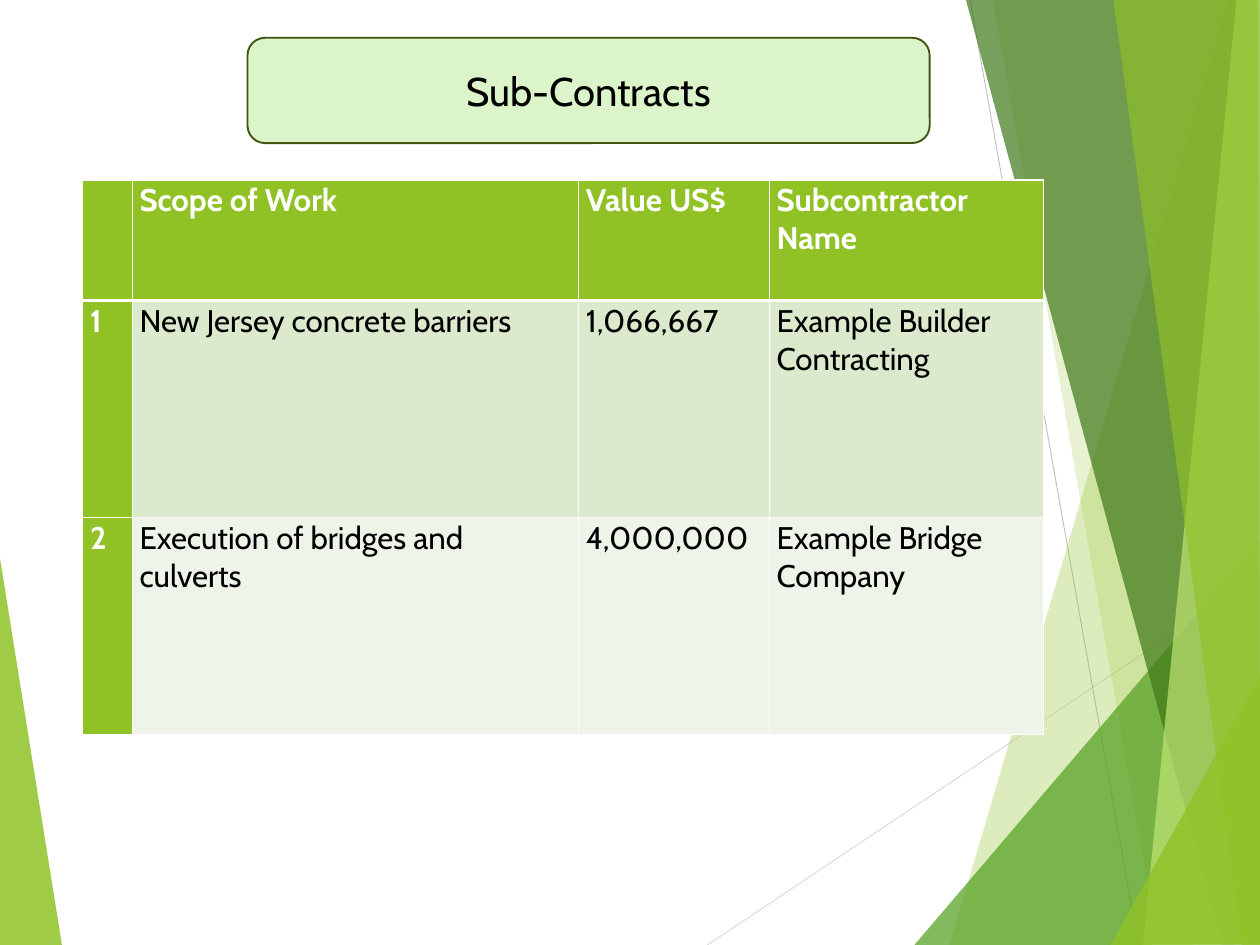
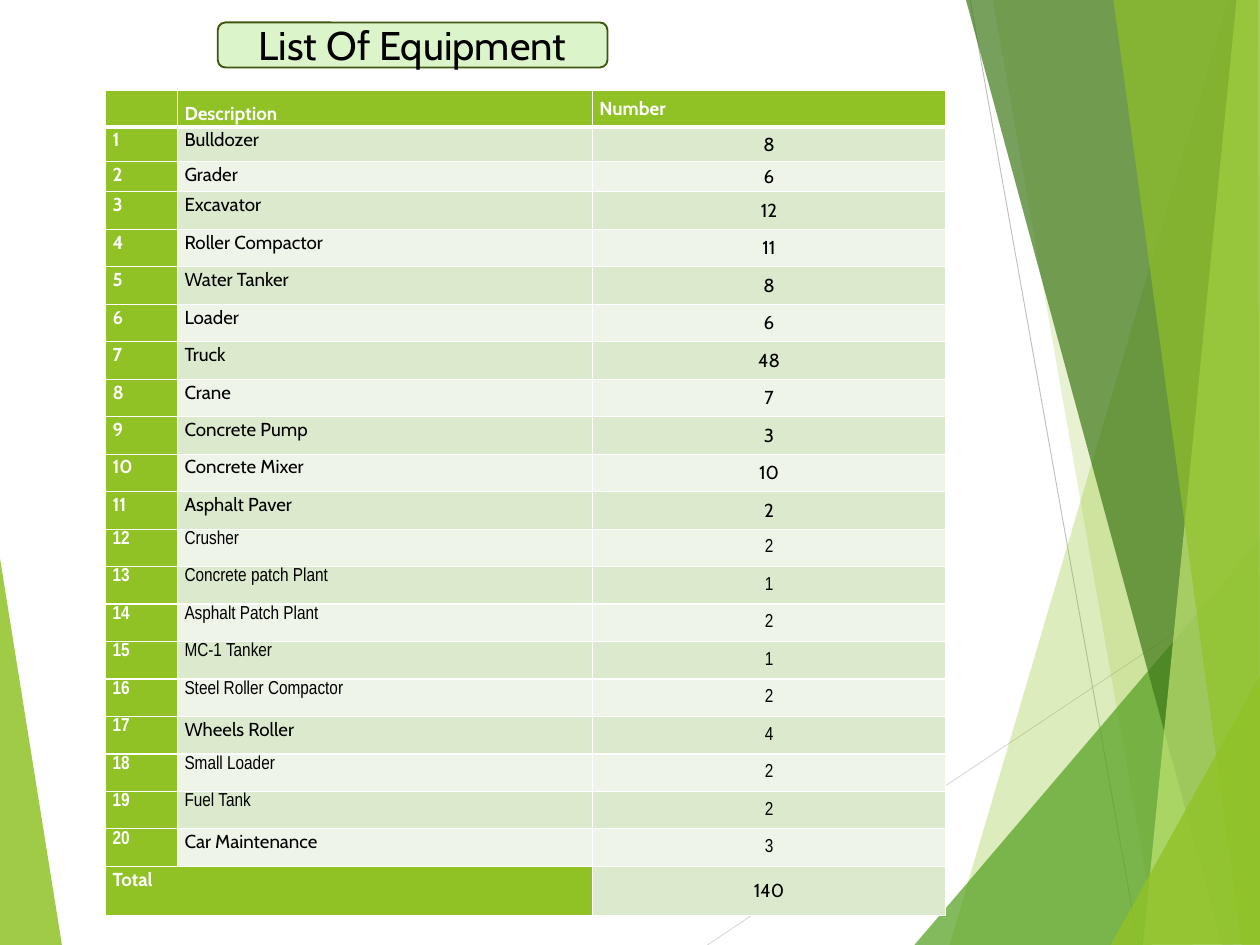
from dataclasses import dataclass
from typing import Optional

from lxml import etree
from pptx import Presentation
from pptx.dml.color import RGBColor
from pptx.enum.shapes import MSO_CONNECTOR as Conn, MSO_SHAPE as Shape
from pptx.enum.text import MSO_ANCHOR as Anchor, PP_ALIGN as Align
from pptx.oxml.ns import qn
from pptx.util import Inches, Pt

# Shared colours and fonts
GREEN, DARK_GREEN, MID_GREEN, LIME = "90C226", "3F7819", "54A021", "C0E474"
TITLE_FILL, TITLE_LINE = "DBF4CA", "3F5511"
BAND_ODD, BAND_EVEN = "DBE9CD", "EEF4E8"
WHITE, BLACK = "FFFFFF", "000000"
CABIN, NARROW = "Cabin", "Arial Narrow"


@dataclass(frozen=True)
class Facet:
    color: str
    opacity: int
    points: tuple[tuple[float, float], ...]


@dataclass(frozen=True)
class Ray:
    color: str
    start: tuple[float, float]
    end: tuple[float, float]


@dataclass(frozen=True)
class Box:
    left: float
    top: float
    width: float
    height: float


@dataclass(frozen=True)
class CellStyle:
    fill: str
    color: str = BLACK
    bold: bool = False
    font: str = CABIN
    align: Align = Align.LEFT
    anchor: Anchor = Anchor.TOP


# Backdrop, from back to front
BACKDROP = (
    Facet(GREEN, 85, ((-0.01, 6.14), (0.69, 10.51), (-0.01, 10.5))),
    Ray("D9D9D9", (7.86, 10.5), (14.01, 6.39)),
    Ray("BFBFBF", (10.78, 0), (12.65, 10.5)),
    Facet(GREEN, 30, ((13.65, 0), (10.55, 10.5), (14.03, 10.51), (14.01, 0.01))),
    Facet(GREEN, 20, ((11.03, -0.01), (12.87, 10.5), (14.01, 10.5), (14.01, -0.01))),
    Facet(MID_GREEN, 72, ((10.16, 10.5), (14, 6), (14.01, 10.5))),
    Facet(DARK_GREEN, 70, ((10.73, -0.01), (13.58, 10.5), (14.01, 10.49), (14.01, -0.01))),
    Facet(LIME, 70, ((13.74, -0.01), (12.7, 10.5), (14.01, 10.5), (14.01, -0.01))),
    Facet(GREEN, 65, ((12.37, -0.01), (13.8, 10.5), (14, 10.5), (13.98, -0.01))),
    Facet(GREEN, 80, ((12.34, 10.5), (14.01, 7.49), (14.02, 10.49))),
)

CONTRACTS = (
    ("", "Scope of Work", "Value US$", "Subcontractor Name"),
    ("1", "New Jersey concrete barriers", "1,066,667", "Example Builder Contracting"),
    ("2", "Execution of bridges and culverts", "4,000,000", "Example Bridge Company"),
)

EQUIPMENT = (
    ("Bulldozer", 8), ("Grader", 6), ("Excavator", 12), ("Roller Compactor", 11),
    ("Water Tanker", 8), ("Loader", 6), ("Truck", 48), ("Crane", 7),
    ("Concrete Pump", 3), ("Concrete Mixer", 10), ("Asphalt Paver", 2),
    ("Crusher", 2), ("Concrete patch Plant", 1), ("Asphalt Patch Plant", 2),
    ("MC-1 Tanker", 1), ("Steel Roller Compactor", 2), ("Wheels Roller", 4),
    ("Small Loader", 2), ("Fuel Tank", 2), ("Car Maintenance", 3),
)
FIRST_NARROW_ROW = 12
CABIN_ITEMS = ("Wheels Roller", "Car Maintenance")


def rgb(color: str) -> RGBColor:
    return RGBColor.from_string(color)


def set_text(tf, text: str, *, size: float, color: str = BLACK, bold: bool = False,
             font: str = CABIN, align: Align = Align.LEFT) -> None:
    p = tf.paragraphs[0]
    p.alignment = align
    p.font.size = Pt(size)
    if text:
        r = p.add_run()
        r.text = text
        r.font.size, r.font.name, r.font.bold = Pt(size), font, bold
        r.font.color.rgb = rgb(color)


def draw_facet(s, facet: Facet) -> None:
    points = [(Inches(x), Inches(y)) for x, y in facet.points]
    builder = s.shapes.build_freeform(*points[0])
    builder.add_line_segments(points[1:], close=True)
    sp = builder.convert_to_shape()
    sp.shadow.inherit = False
    sp.line.fill.background()
    sp.fill.solid()
    sp.fill.fore_color.rgb = rgb(facet.color)
    clr = sp.fill._xPr.find(qn("a:solidFill")).find(qn("a:srgbClr"))
    etree.SubElement(clr, qn("a:alpha"), val=str(facet.opacity * 1000))


def draw_ray(s, ray: Ray) -> None:
    ends = [Inches(v) for v in ray.start + ray.end]
    line = s.shapes.add_connector(Conn.STRAIGHT, *ends)
    line.line.color.rgb = rgb(ray.color)
    line.line.width = Pt(0.75)
    etree.SubElement(line._element.spPr, qn("a:effectLst"))


def draw_title(s, text: str, box: Box) -> None:
    sp = s.shapes.add_shape(Shape.ROUNDED_RECTANGLE, Inches(box.left), Inches(box.top),
                            Inches(box.width), Inches(box.height))
    sp.shadow.inherit = False
    sp.fill.solid()
    sp.fill.fore_color.rgb = rgb(TITLE_FILL)
    sp.line.color.rgb = rgb(TITLE_LINE)
    sp.line.width = Pt(1.5)
    tf = sp.text_frame
    tf.word_wrap = True
    tf.vertical_anchor = Anchor.MIDDLE
    set_text(tf, text, size=32, align=Align.CENTER)


def new_slide(prs, title: str, box: Box):
    s = prs.slides.add_slide(prs.slide_layouts[6])
    for part in BACKDROP:
        if isinstance(part, Facet):
            draw_facet(s, part)
        else:
            draw_ray(s, part)
    draw_title(s, title, box)
    return s


def set_borders(cell, top: float, bottom: float) -> None:
    tc_pr = cell._tc.get_or_add_tcPr()
    for side, width in (("L", 1), ("R", 1), ("T", top), ("B", bottom)):
        ln = etree.SubElement(tc_pr, qn(f"a:ln{side}"), w=str(Pt(width)))
        fill = etree.SubElement(ln, qn("a:solidFill"))
        etree.SubElement(fill, qn("a:srgbClr"), val=WHITE)


def fill_cell(cell, text: str, size: float, row: int, style: CellStyle) -> None:
    # A thick rule parts the header from the body
    set_borders(cell, top=3 if row == 1 else 1, bottom=3 if row == 0 else 1)
    cell.fill.solid()
    cell.fill.fore_color.rgb = rgb(style.fill)
    cell.margin_left = cell.margin_right = Inches(0.08)
    cell.margin_top = cell.margin_bottom = Inches(0.02)
    cell.vertical_anchor = style.anchor
    set_text(cell.text_frame, text, size=size, color=style.color, bold=style.bold,
             font=style.font, align=style.align)


def draw_table(s, box: Box, cols: list[float], heights: list[float], rows, size: float,
               style_of) -> object:
    table = s.shapes.add_table(len(rows), len(cols), Inches(box.left), Inches(box.top),
                               Inches(box.width), Inches(box.height)).table
    table.horz_banding = False
    for col, width in zip(table.columns, cols):
        col.width = Inches(width)
    for row, height in zip(table.rows, heights):
        row.height = Inches(height)
    for i, row in enumerate(rows):
        for j, text in enumerate(row):
            fill_cell(table.cell(i, j), text, size, i, style_of(i, j, text))
    return table


def base_style(row: int, col: int, text: Optional[str] = None) -> CellStyle:
    if row == 0 or col == 0:
        return CellStyle(GREEN, WHITE, True)
    return CellStyle(BAND_ODD if row % 2 else BAND_EVEN)


def equipment_style(row: int, col: int, text: str) -> CellStyle:
    base = base_style(row, col)
    narrow = FIRST_NARROW_ROW <= row <= len(EQUIPMENT) and text not in CABIN_ITEMS
    align, anchor = Align.LEFT, Anchor.TOP
    if col == 2:
        anchor = Anchor.MIDDLE
        align = Align.CENTER if row else Align.LEFT
    elif row == 0:
        anchor = Anchor.BOTTOM
    return CellStyle(base.fill, base.color, base.bold, NARROW if narrow else CABIN,
                     align, anchor)


def contracts_slide(prs) -> None:
    s = new_slide(prs, "Sub-Contracts", Box(2.75, 0.42, 7.58, 1.17))
    draw_table(s, Box(0.92, 2, 10.67, 6.17), [0.55, 4.96, 2.12, 3.04],
               [1.34, 2.41, 2.41], CONTRACTS, 25, base_style)


def equipment_slide(prs) -> None:
    s = new_slide(prs, "List Of Equipment", Box(2.42, 0.25, 4.33, 0.5))
    total = sum(count for _, count in EQUIPMENT)
    rows = [("", "Description", "Number")]
    rows += [(str(n), name, str(count)) for n, (name, count) in enumerate(EQUIPMENT, 1)]
    rows.append(("Total", "", str(total)))
    heights = [0.41, 0.39, 0.33] + [7.5 / 18] * 18 + [0.55]
    table = draw_table(s, Box(1.17, 1, 9.33, 9.19), [0.8, 4.61, 3.93], heights, rows,
                       15, equipment_style)
    last = len(rows) - 1
    table.cell(last, 0).merge(table.cell(last, 1))


def main() -> None:
    prs = Presentation()
    prs.slide_width, prs.slide_height = Inches(14), Inches(10.5)
    contracts_slide(prs)
    equipment_slide(prs)
    prs.save("out.pptx")


if __name__ == "__main__":
    main()
